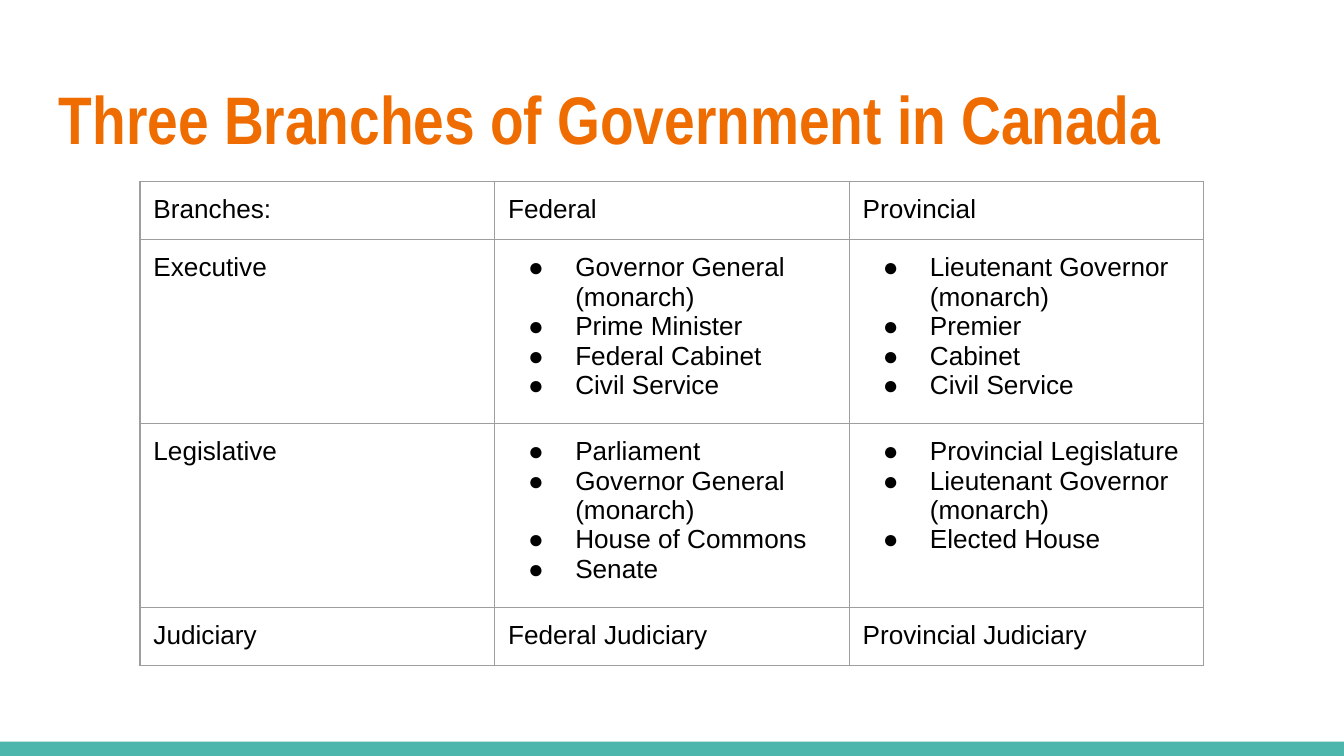
from lxml import etree
from pptx import Presentation
from pptx.dml.color import RGBColor
from pptx.enum import shapes, text
from pptx.oxml import ns
from pptx.util import Pt

PAD = 7.2
ROWS = [
    ["Branches:", "Federal", "Provincial"],
    ["Executive",
     ["Governor General (monarch)", "Prime Minister", "Federal Cabinet", "Civil Service"],
     ["Lieutenant Governor (monarch)", "Premier", "Cabinet", "Civil Service"]],
    ["Legislative",
     ["Parliament", "Governor General (monarch)", "House of Commons", "Senate"],
     ["Provincial Legislature", "Lieutenant Governor (monarch)", "Elected House"]],
    ["Judiciary", "Federal Judiciary", "Provincial Judiciary"],
]


def color(code):
    return RGBColor.from_string(code)


def node(parent, tag, **attrs):
    return etree.SubElement(parent, ns.qn(tag), attrs)


def style(par, face, size, code, bold=False):
    for run in par.runs:
        font = run.font
        font.name, font.size, font.bold = face, Pt(size), bold
        font.color.rgb = color(code)


def pad(box):
    box.margin_left = box.margin_right = Pt(PAD)
    box.margin_top = box.margin_bottom = Pt(PAD)


def add_bar(slide):
    bar = slide.shapes.add_shape(shapes.MSO_SHAPE.RECTANGLE,
                                 Pt(0), Pt(397.3), Pt(720), Pt(7.7))
    bar.shadow.inherit = False
    bar.fill.solid()
    bar.fill.fore_color.rgb = color("4DB6AC")
    bar.line.fill.background()


def add_title(slide, words):
    frame = slide.shapes.add_textbox(Pt(24.5), Pt(35.3), Pt(671), Pt(55.4)).text_frame
    frame.word_wrap = True
    frame.vertical_anchor = text.MSO_ANCHOR.MIDDLE
    pad(frame)
    frame.text = words
    style(frame.paragraphs[0], "Arial Narrow", 36, "EF6C00", True)


def add_bullet(par):
    props = par._p.get_or_add_pPr()
    props.set("marL", str(Pt(36)))
    props.set("indent", str(-Pt(25.2)))
    node(node(props, "a:buClr"), "a:srgbClr", val="000000")
    node(props, "a:buSzPts", val="1400")
    node(props, "a:buFont", typeface="Arial")
    node(props, "a:buChar", char="●")


def add_border(cell, code):
    props = cell._tc.get_or_add_tcPr()
    for side in ("a:lnL", "a:lnR", "a:lnT", "a:lnB"):
        line = node(props, side, w=str(Pt(0.75)))
        node(node(line, "a:solidFill"), "a:srgbClr", val=code)


def fill_cell(cell, item):
    listed = isinstance(item, list)
    cell.text_frame.text = "\n".join(item) if listed else item
    pad(cell)
    for par in cell.text_frame.paragraphs:
        style(par, "Arial", 14, "000000")
        if listed:
            add_bullet(par)
    # Borders come before the fill in the cell properties
    add_border(cell, "9E9E9E")
    cell.fill.background()


def add_grid(slide, rows):
    wide, high = 190, 30
    count = len(rows[0])
    grid = slide.shapes.add_table(len(rows), count, Pt(75), Pt(97.2),
                                  Pt(wide * count), Pt(high * len(rows))).table
    grid.first_row = grid.horz_banding = False
    for col in grid.columns:
        col.width = Pt(wide)
    for r, row in enumerate(rows):
        grid.rows[r].height = Pt(high)
        for c, item in enumerate(row):
            fill_cell(grid.cell(r, c), item)


def main():
    deck = Presentation()
    deck.slide_width, deck.slide_height = Pt(720), Pt(405)
    slide = deck.slides.add_slide(deck.slide_layouts[6])
    # Footer bar
    add_bar(slide)
    # Heading
    add_title(slide, "Three Branches of Government in Canada")
    # Table of branches
    add_grid(slide, ROWS)
    deck.save("out.pptx")


if __name__ == "__main__":
    main()
